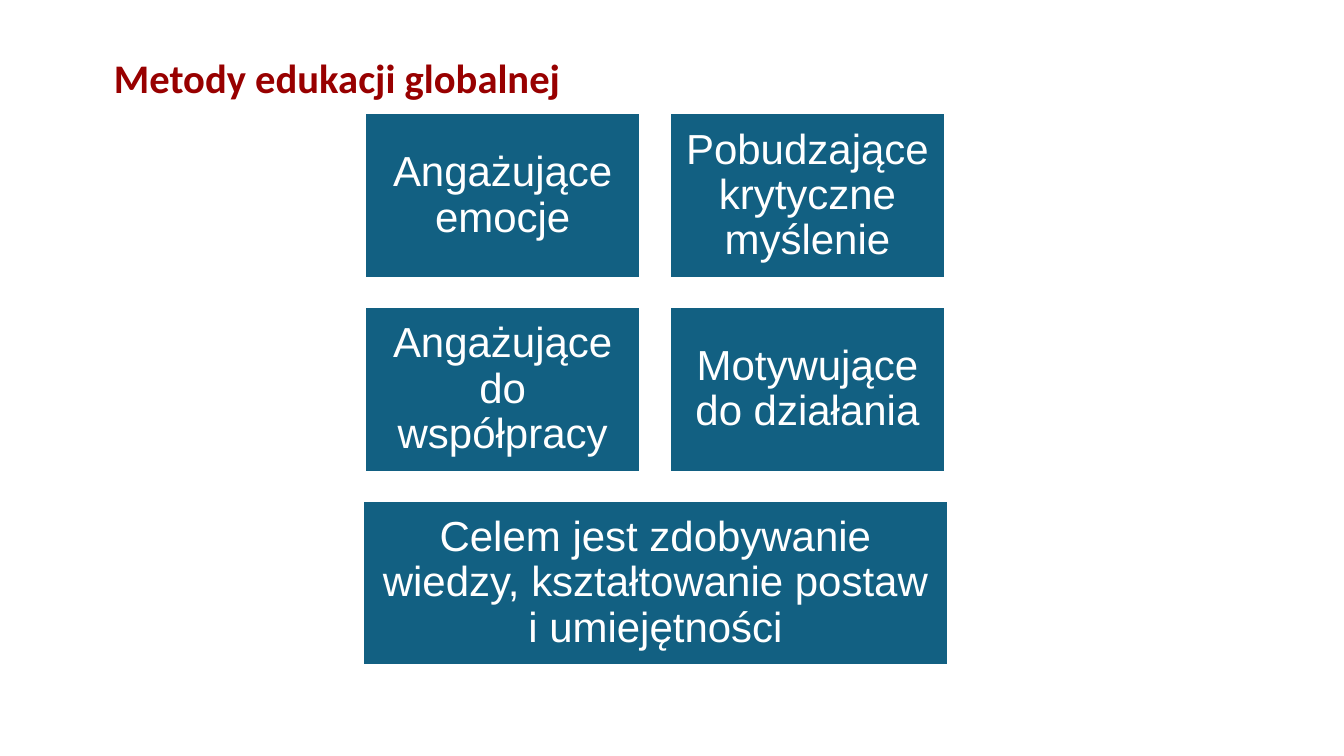
from pptx import Presentation
from pptx.dml.color import RGBColor
from pptx.enum.shapes import MSO_SHAPE
from pptx.enum.text import MSO_ANCHOR, PP_ALIGN
from pptx.util import Cm, Pt

WHITE = RGBColor(0xFF, 0xFF, 0xFF)
TEAL = RGBColor(0x12, 0x60, 0x82)
DARK_RED = RGBColor(0x98, 0x00, 0x00)

METHODS = [
    "Angażujące emocje",
    "Pobudzające krytyczne myślenie",
    "Angażujące do współpracy",
    "Motywujące do działania",
]
GOAL = "Celem jest zdobywanie wiedzy, kształtowanie postaw i umiejętności"

GRID_LEFT, GRID_TOP = 9.19, 2.85
BOX_WIDTH, BOX_HEIGHT = 6.96, 4.17
COLUMN_STEP, ROW_STEP = 7.68, 4.88


def set_text(sp, text, font, size, color, spacing, inset):
    tf = sp.text_frame
    tf.word_wrap = True
    tf.margin_left = tf.margin_right = Cm(inset)
    tf.margin_top = tf.margin_bottom = Cm(inset)
    p = tf.paragraphs[0]
    p.text = text
    p.line_spacing = spacing
    p.font.name = font
    p.font.size = Pt(size)
    p.font.color.rgb = color
    return p


def add_title(slide, text):
    sp = slide.shapes.add_textbox(Cm(2.62), Cm(0.89), Cm(24.31), Cm(1.93))
    p = set_text(sp, text, "Calibri", 29, DARK_RED, 1.15, 0.25)
    p.font.bold = True


def add_box(slide, text, left, row, width):
    sp = slide.shapes.add_shape(
        MSO_SHAPE.RECTANGLE,
        Cm(left), Cm(GRID_TOP + row * ROW_STEP), Cm(width), Cm(BOX_HEIGHT),
    )
    sp.shadow.inherit = False
    sp.fill.solid()
    sp.fill.fore_color.rgb = TEAL
    sp.line.color.rgb = WHITE
    sp.line.width = Pt(2)
    sp.text_frame.vertical_anchor = MSO_ANCHOR.MIDDLE
    p = set_text(sp, text, "Arial", 30, WHITE, 0.9, 0.3)
    p.alignment = PP_ALIGN.CENTER


def main():
    prs = Presentation()
    prs.slide_width, prs.slide_height = Cm(33.87), Cm(19.05)
    slide = prs.slides.add_slide(prs.slide_layouts[6])

    for i, method in enumerate(METHODS):
        row, column = divmod(i, 2)
        add_box(slide, method, GRID_LEFT + column * COLUMN_STEP, row, BOX_WIDTH)
    add_box(slide, GOAL, 9.14, 2, 14.76)
    add_title(slide, "Metody edukacji globalnej")

    prs.save("out.pptx")


if __name__ == "__main__":
    main()
